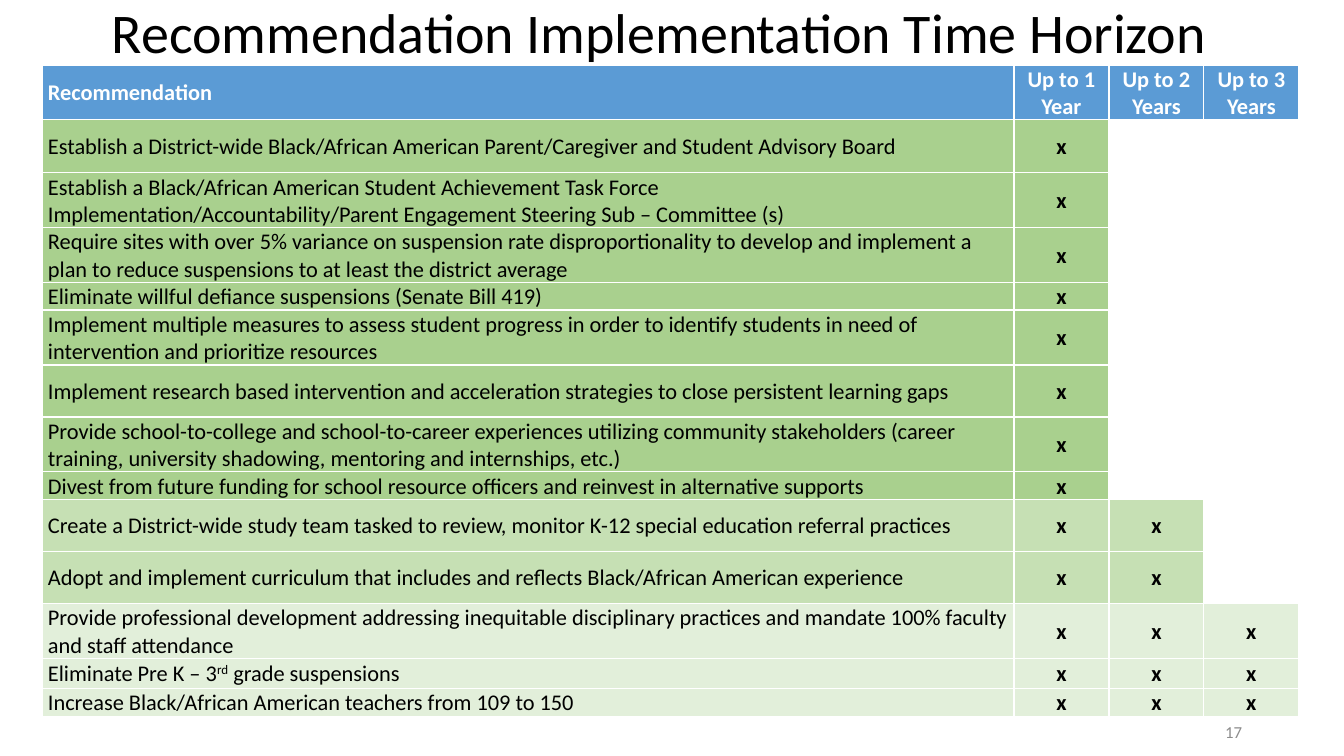
from lxml import etree
from pptx import Presentation
from pptx import util as u
from pptx.dml.color import RGBColor
from pptx.enum import text
from pptx.oxml.ns import qn

# Content
TITLE = "Recommendation Implementation Time Horizon"
PAGE_NUMBER = "17"
HEADINGS = ["Recommendation", "Up to 1 Year", "Up to 2 Years", "Up to 3 Years"]
# (recommendation, years marked, row height in px); ^...^ is superscript
RECOMMENDATIONS = [
    ("Establish a District-wide Black/African American Parent/Caregiver and Student Advisory Board", 1, 53),
    ("Establish a Black/African American Student Achievement Task Force "
     "Implementation/Accountability/Parent Engagement Steering Sub – Committee (s)", 1, 52),
    ("Require sites with over 5% variance on suspension rate disproportionality to develop and "
     "implement a plan to reduce suspensions to at least the district average", 1, 52),
    ("Eliminate willful defiance suspensions (Senate Bill 419)", 1, 26),
    ("Implement multiple measures to assess student progress in order to identify students in need "
     "of intervention and prioritize resources", 1, 53),
    ("Implement research based intervention and acceleration strategies to close persistent "
     "learning gaps", 1, 52),
    ("Provide school-to-college and school-to-career experiences utilizing community stakeholders "
     "(career training, university shadowing, mentoring and internships, etc.)", 1, 53),
    ("Divest from future funding for school resource officers and reinvest in alternative supports", 1, 26),
    ("Create a District-wide study team tasked to review, monitor K-12 special education referral "
     "practices", 2, 52),
    ("Adopt and implement curriculum that includes and reflects Black/African American experience", 2, 52),
    ("Provide professional development addressing inequitable disciplinary practices and mandate "
     "100% faculty and staff attendance", 3, 52),
    ("Eliminate Pre K – 3^rd^ grade suspensions", 3, 30),
    ("Increase Black/African American teachers from 109 to 150", 3, 26),
]
HORIZON_FILLS = {1: "A9D08E", 2: "C6E0B4", 3: "E2EFDA"}
HEADER_FILL, HEADER_HEIGHT = "5B9BD5", 52
COLUMN_WIDTHS = [972, 95, 95, 95]
THICK_RULES = {(4, 5), (6, 7)}  # neighbouring rows with a heavier line between


def px(n):
    return u.Emu(round(n * 9144 / 1.008 ))


def color(value):
    return RGBColor.from_string(value)


def style(run, size, ink, bold=False):
    run.font.name, run.font.size, run.font.bold = "Calibri", u.Pt(size), bold
    run.font.color.rgb = color(ink)


def draw_borders(cell, row):
    props = cell._tc.get_or_add_tcPr()
    for side in "LRTB":
        thick = (side == "T" and (row - 1, row) in THICK_RULES) or \
                (side == "B" and (row, row + 1) in THICK_RULES)
        line = etree.SubElement(props, qn("a:ln" + side), w=str(u.Pt(1.5 if thick else 1)))
        fill = etree.SubElement(line, qn("a:solidFill"))
        etree.SubElement(fill, qn("a:srgbClr"), val="FFFFFF")


def fill_cell(cell, row, col, words, fill, ink, bold):
    cell.margin_left = px(6 if col == 0 else 1)
    cell.margin_right = cell.margin_top = px(1)
    cell.margin_bottom = 0
    cell.vertical_anchor = text.MSO_ANCHOR.MIDDLE
    draw_borders(cell, row)
    paragraph = cell.text_frame.paragraphs[0]
    if not words:
        cell.fill.background()
        # Keeps an empty cell from stretching its row
        etree.SubElement(paragraph._p, qn("a:endParaRPr"), sz="1600")
        return
    cell.fill.solid()
    cell.fill.fore_color.rgb = color(fill)
    paragraph.alignment = text.PP_ALIGN.CENTER if col else text.PP_ALIGN.LEFT
    for i, part in enumerate(words.split("^")):
        run = paragraph.add_run()
        run.text = part
        style(run, 16, ink, bold)
        if i % 2:
            run._r.get_or_add_rPr().set("baseline", "30000")


prs = Presentation()
prs.slide_width, prs.slide_height = px(1344), px(756)
slide = prs.slides.add_slide(prs.slide_layouts[5])

# Title
title = slide.shapes.title
title.left, title.top, title.width, title.height = px(42), px(7), px(1234), px(56)
title.text_frame.text = TITLE
title.text_frame.auto_size = text.MSO_AUTO_SIZE.NONE
title.text_frame.vertical_anchor = text.MSO_ANCHOR.MIDDLE
heading = title.text_frame.paragraphs[0]
heading.alignment, heading.line_spacing = text.PP_ALIGN.CENTER, 0.9
style(heading.runs[0], 40, "000000")

# Page number
footer = slide.shapes.add_textbox(px(950), px(712), px(302), px(40)).text_frame
footer.word_wrap = True
footer.vertical_anchor = text.MSO_ANCHOR.MIDDLE
footer.text = PAGE_NUMBER
footer.paragraphs[0].alignment = text.PP_ALIGN.RIGHT
style(footer.paragraphs[0].runs[0], 12, "8C8C8C")

# Time horizon table
heights = [HEADER_HEIGHT] + [height for _, _, height in RECOMMENDATIONS]
horizon = slide.shapes.add_table(len(heights), len(HEADINGS), px(42), px(65),
                                 px(sum(COLUMN_WIDTHS)), px(sum(heights))).table
horizon.first_row = horizon.horz_banding = False
for column, width in zip(horizon.columns, COLUMN_WIDTHS):
    column.width = px(width)
for row, height in zip(horizon.rows, heights):
    row.height = px(height)

for col, label in enumerate(HEADINGS):
    fill_cell(horizon.cell(0, col), 0, col, label, HEADER_FILL, "FFFFFF", True)
for row, (recommendation, years, _) in enumerate(RECOMMENDATIONS, start=1):
    for col in range(len(HEADINGS)):
        words = recommendation if col == 0 else "x" if col <= years else ""
        fill_cell(horizon.cell(row, col), row, col, words, HORIZON_FILLS[years], "000000", col > 0)

prs.save("out.pptx")
